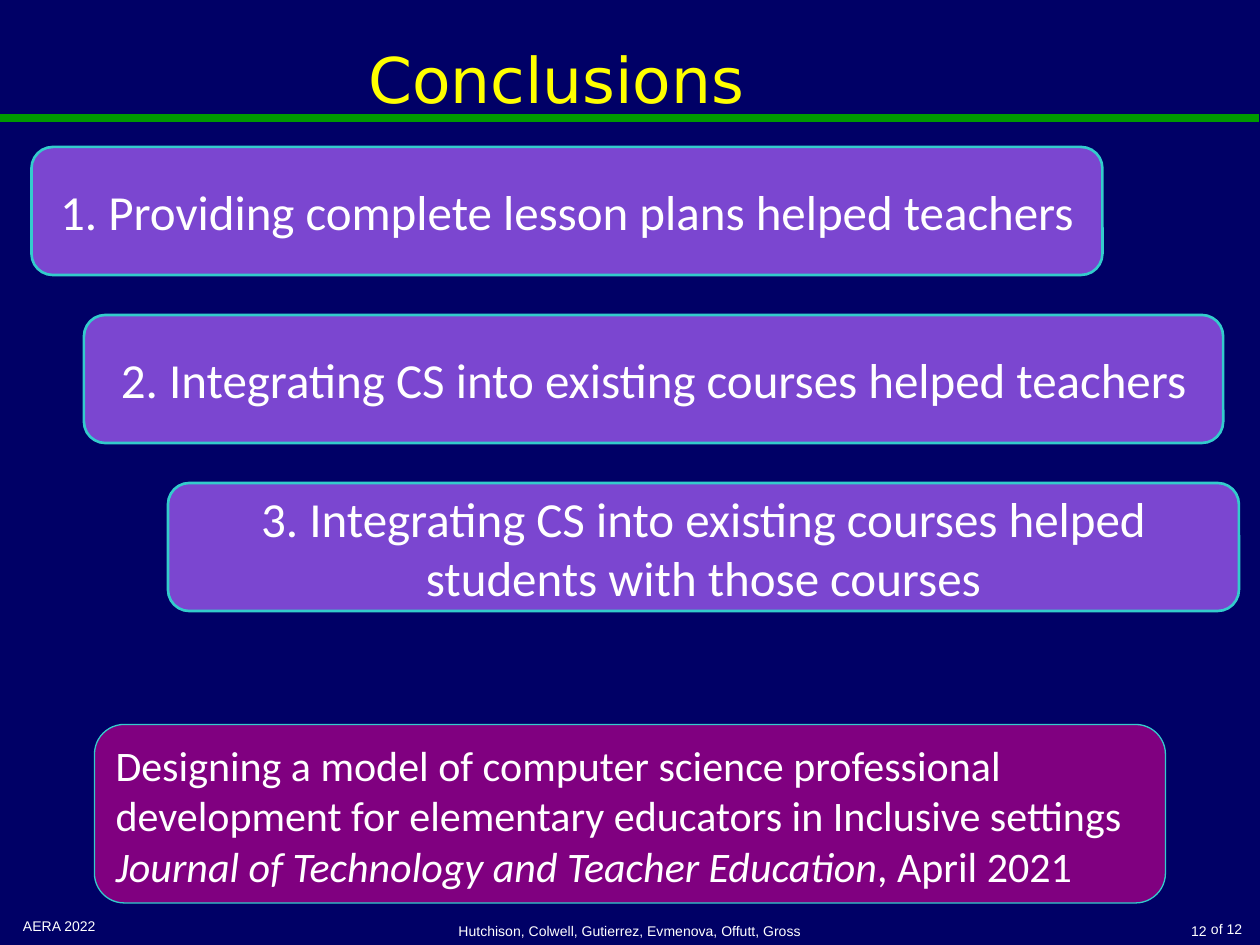
from lxml.etree import SubElement
from pptx import Presentation
from pptx.dml.color import RGBColor
from pptx.enum.shapes import MSO_CONNECTOR, MSO_SHAPE
from pptx.enum.text import MSO_ANCHOR, PP_ALIGN
from pptx.oxml.ns import qn
from pptx.util import Inches, Pt

LEFT, MID, RIGHT = PP_ALIGN.LEFT, PP_ALIGN.CENTER, PP_ALIGN.RIGHT
TOP, CENTER, BASE = MSO_ANCHOR.TOP, MSO_ANCHOR.MIDDLE, MSO_ANCHOR.BOTTOM


def grid(*cells):
    """Turn cells of a 120 by 90 grid into lengths."""
    return [Inches(cell / 12) for cell in cells]


def write(shape, *parts, font="Arial", size=8, color="FFFFFF",
          align=LEFT, anchor=TOP, wrap=True):
    """Fill a shape with one paragraph; every second part is italic."""
    frame = shape.text_frame
    frame.word_wrap = wrap
    frame.vertical_anchor = anchor
    para = frame.paragraphs[0]
    para.alignment = align
    for i, part in enumerate(parts):
        run = para.add_run()
        run.text = part
        run.font.name = font
        run.font.size = Pt(size)
        run.font.bold = False
        run.font.italic = i % 2 == 1
        run.font.color.rgb = RGBColor.from_string(color)


deck = Presentation()
deck.slide_width, deck.slide_height = grid(120, 90)
slide = deck.slides.add_slide(deck.slide_layouts[5])
back = slide.background.fill
back.solid()
back.fore_color.rgb = RGBColor.from_string("000066")

# Title and the rule below it
title = slide.shapes.title
title.left, title.top, title.width, title.height = grid(1, 0, 104, 15)
write(title, "Conclusions", font="DejaVu Sans", size=36, color="FFFF00",
      align=MID, anchor=CENTER)
rule = slide.shapes.add_connector(MSO_CONNECTOR.STRAIGHT, *grid(0, 11.2, 119.9, 11.2))
rule.line.color.rgb = RGBColor.from_string("009900")
rule.line.width = Pt(4.5)
SubElement(rule._element.spPr, qn("a:effectLst"))

# Footer
foot = [
    ("AERA 2022", (1, 86.8, 28, 3.2), LEFT, TOP, True),
    ("Hutchison, Colwell, Gutierrez, Evmenova, Offutt, Gross",
     (41, 86.8, 38, 3.2), MID, BASE, True),
    ("12", (94.4, 86.8, 21.7, 3.2), RIGHT, BASE, True),
    ("of 12", (114, 87.1, 5.5, 2.9), RIGHT, TOP, False),
]
for text, cells, align, anchor, wrap in foot:
    box = slide.shapes.add_textbox(*grid(*cells))
    write(box, text, align=align, anchor=anchor, wrap=wrap)

# Paper, then the three conclusions, one step of 16 rows apart
paper = ("Designing a model of computer science professional development "
         "for elementary educators in Inclusive settings ",
         "Journal of Technology and Teacher Education", ", April 2021")
cards = [((9, 69, 102, 17), "800080", 0.75, paper, 24, LEFT, TOP)]
points = [
    (3, 102, "1. Providing complete lesson plans helped teachers"),
    (8, 108.5, "2. Integrating CS into existing courses helped teachers"),
    (16, 102, "3. Integrating CS into existing courses helped students with those courses"),
]
for i, (col, wide, text) in enumerate(points):
    cards.append(((col, 14 + 16 * i, wide, 12.2), "7B46D0", 1.5,
                  (text,), 28, MID, CENTER))

for cells, fill, line, parts, size, align, anchor in cards:
    card = slide.shapes.add_shape(MSO_SHAPE.ROUNDED_RECTANGLE, *grid(*cells))
    card.shadow.inherit = False
    card.fill.solid()
    card.fill.fore_color.rgb = RGBColor.from_string(fill)
    card.line.color.rgb = RGBColor.from_string("33CCCC")
    card.line.width = Pt(line)
    write(card, *parts, font="Calibri", size=size, align=align, anchor=anchor)

deck.save("out.pptx")
